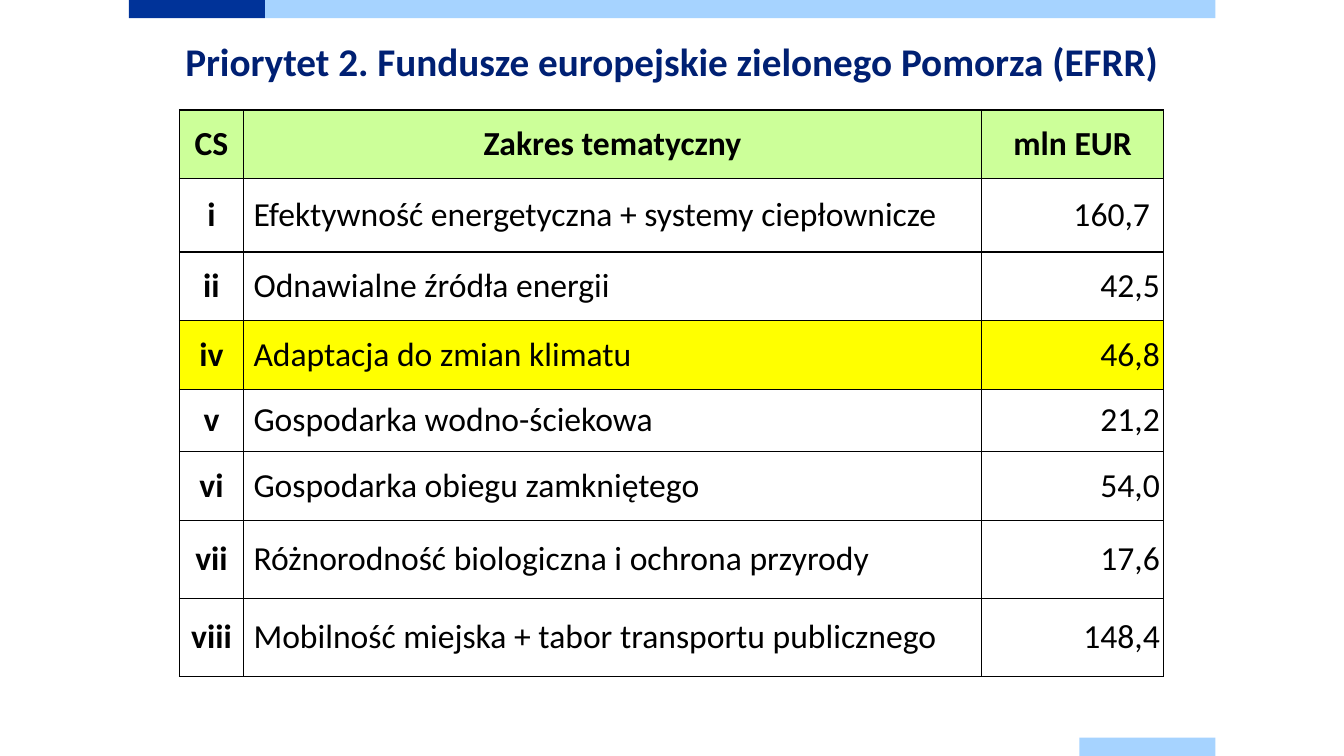
from dataclasses import dataclass
from typing import Optional

from lxml.etree import SubElement
from pptx import Presentation
from pptx.dml.color import RGBColor
from pptx.enum.shapes import MSO_SHAPE
from pptx.enum.text import MSO_ANCHOR, PP_ALIGN
from pptx.oxml import parse_xml
from pptx.oxml.ns import nsdecls, qn
from pptx.slide import Slide
from pptx.table import _Cell
from pptx.text.text import _Paragraph
from pptx.util import Cm, Pt


@dataclass(frozen=True)
class Theme:
    font: str = "Calibri"
    title_size: int = 28
    table_size: int = 24
    border_width: int = 1
    navy: str = "003399"
    sky: str = "A6D3FF"
    title: str = "002073"
    ink: str = "000000"
    header: str = "CCFF99"
    highlight: str = "FFFF00"
    plain: str = "FFFFFF"


THEME = Theme()


@dataclass(frozen=True)
class Bar:
    left: float
    top: float
    width: float
    color: str


@dataclass(frozen=True)
class Objective:
    code: str
    scope: str
    amount: str
    height: float
    fill: str = THEME.plain
    amount_margin: float = 0.1


@dataclass(frozen=True)
class Column:
    width: float
    align: PP_ALIGN
    bold: bool
    margin_left: float
    margin_right: float


SLIDE_WIDTH, SLIDE_HEIGHT = 33.87, 19.05
BAR_HEIGHT = 0.46
BARS = [
    Bar(3.25, 0, 3.43, THEME.navy),
    Bar(6.68, 0, 23.95, THEME.sky),
    Bar(27.2, SLIDE_HEIGHT - BAR_HEIGHT, 3.43, THEME.sky),
]
HEADINGS = Objective("CS", "Zakres tematyczny", "mln EUR", 1.73, THEME.header)
OBJECTIVES = [
    Objective("i", "Efektywność energetyczna + systemy ciepłownicze", "160,7", 1.85,
              amount_margin=0.35),
    Objective("ii", "Odnawialne źródła energii", "42,5", 1.73),
    Objective("iv", "Adaptacja do zmian klimatu", "46,8", 1.73, THEME.highlight),
    Objective("v", "Gospodarka wodno-ściekowa", "21,2", 1.57),
    Objective("vi", "Gospodarka obiegu zamkniętego", "54,0", 1.73),
    Objective("vii", "Różnorodność biologiczna i ochrona przyrody", "17,6", 1.97),
    Objective("viii", "Mobilność miejska + tabor transportu publicznego", "148,4", 1.97),
]
COLUMNS = [
    Column(1.62, PP_ALIGN.CENTER, True, 0.25, 0.25),
    Column(18.59, PP_ALIGN.LEFT, False, 0.25, 0),
    Column(4.6, PP_ALIGN.RIGHT, False, 0, 0.1),
]


def add_text(paragraph: _Paragraph, text: str, size: int, color: str, bold: bool) -> None:
    run = paragraph.add_run()
    run.text = text
    run.font.name = THEME.font
    run.font.size = Pt(size)
    run.font.bold = bold
    run.font.color.rgb = RGBColor.from_string(color)


def add_bar(slide: Slide, bar: Bar) -> None:
    shape = slide.shapes.add_shape(
        MSO_SHAPE.RECTANGLE, Cm(bar.left), Cm(bar.top), Cm(bar.width), Cm(BAR_HEIGHT))
    shape.shadow.inherit = False
    shape.fill.solid()
    shape.fill.fore_color.rgb = RGBColor.from_string(bar.color)
    shape.line.fill.background()


def add_title(slide: Slide, text: str) -> None:
    frame = slide.shapes.add_textbox(Cm(4.42), Cm(0.74), Cm(25.2), Cm(1.57)).text_frame
    frame.word_wrap = True
    frame.vertical_anchor = MSO_ANCHOR.MIDDLE
    add_text(frame.paragraphs[0], text, THEME.title_size, THEME.title, True)


def set_borders(cell: _Cell) -> None:
    properties = cell._tc.get_or_add_tcPr()
    for position, side in enumerate(("lnL", "lnR", "lnT", "lnB")):
        border = parse_xml(f'<a:{side} {nsdecls("a")} w="{Pt(THEME.border_width)}"/>')
        solid = SubElement(border, qn("a:solidFill"))
        SubElement(solid, qn("a:srgbClr"), val=THEME.ink)
        properties.insert(position, border)


def fill_cell(cell: _Cell, text: str, column: Column, fill: str,
              is_heading: bool, margin_right: Optional[float] = None) -> None:
    centred_heading = is_heading and not column.bold
    right = column.margin_right if margin_right is None else margin_right
    cell.margin_left = Cm(0 if centred_heading else column.margin_left)
    cell.margin_right = Cm(0 if centred_heading else right)
    cell.margin_top = cell.margin_bottom = 0
    cell.vertical_anchor = MSO_ANCHOR.MIDDLE
    cell.fill.solid()
    cell.fill.fore_color.rgb = RGBColor.from_string(fill)
    set_borders(cell)
    paragraph = cell.text_frame.paragraphs[0]
    paragraph.alignment = PP_ALIGN.CENTER if is_heading else column.align
    add_text(paragraph, text, THEME.table_size, THEME.ink, is_heading or column.bold)


def add_allocations(slide: Slide) -> None:
    entries = [HEADINGS, *OBJECTIVES]
    table = slide.shapes.add_table(
        len(entries), len(COLUMNS), Cm(4.52), Cm(2.77),
        Cm(sum(column.width for column in COLUMNS)),
        Cm(sum(entry.height for entry in entries))).table
    table.first_row = table.horz_banding = False
    for index, column in enumerate(COLUMNS):
        table.columns[index].width = Cm(column.width)
    for row, entry in enumerate(entries):
        table.rows[row].height = Cm(entry.height)
        texts = (entry.code, entry.scope, entry.amount)
        margins = (None, None, entry.amount_margin)
        for index, column in enumerate(COLUMNS):
            fill_cell(table.cell(row, index), texts[index], column, entry.fill,
                      entry is HEADINGS, margins[index])


def main() -> None:
    presentation = Presentation()
    presentation.slide_width = Cm(SLIDE_WIDTH)
    presentation.slide_height = Cm(SLIDE_HEIGHT)
    slide = presentation.slides.add_slide(presentation.slide_layouts[6])

    # Bars along the top and bottom edges
    for bar in BARS:
        add_bar(slide, bar)

    # Title and funding table
    add_title(slide, "Priorytet 2. Fundusze europejskie zielonego Pomorza (EFRR)")
    add_allocations(slide)

    presentation.save("out.pptx")


if __name__ == "__main__":
    main()
